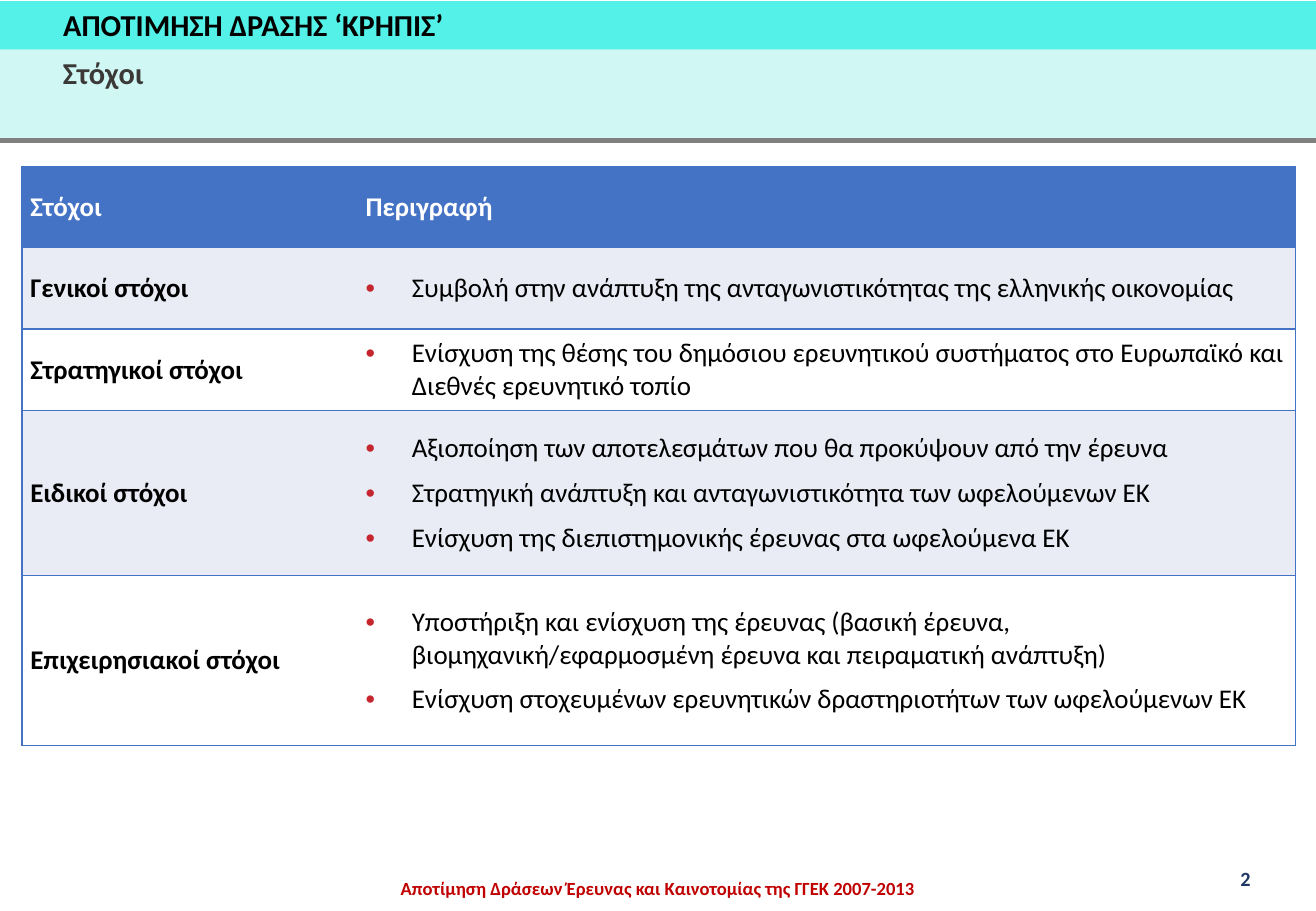
from lxml import etree
from pptx import Presentation
from pptx import util as u
from pptx.dml.color import RGBColor
from pptx.enum import shapes, text
from pptx.oxml import ns

BLACK = RGBColor(0x00, 0x00, 0x00)
WHITE = RGBColor(0xFF, 0xFF, 0xFF)
TURQUOISE = RGBColor(0x53, 0xF1, 0xE8)
PALE_TURQUOISE = RGBColor(0xD0, 0xF7, 0xF3)
GRAY = RGBColor(0x80, 0x80, 0x80)
DARK_GRAY = RGBColor(0x3B, 0x38, 0x38)
NAVY = RGBColor(0x20, 0x38, 0x64)
RED = RGBColor(0xC0, 0x00, 0x00)
BULLET_RED = RGBColor(0xC5, 0x25, 0x2D)
BLUE = RGBColor(0x44, 0x72, 0xC4)
PALE_BLUE = RGBColor(0xE9, 0xEB, 0xF5)

SLIDE_WIDTH, SLIDE_HEIGHT = 10.83, 7.5
PLAIN_TABLE_STYLE = "{2D5ABB26-0587-4C30-8999-92F81FD0307C}"

HEADINGS = ("Στόχοι", "Περιγραφή")
GOALS = [
    ("Γενικοί στόχοι", 0.67, [
        "Συμβολή στην ανάπτυξη της ανταγωνιστικότητας της ελληνικής οικονομίας"]),
    ("Στρατηγικοί στόχοι", 0.67, [
        "Ενίσχυση της θέσης του δημόσιου ερευνητικού συστήματος στο Ευρωπαϊκό "
        "και Διεθνές ερευνητικό τοπίο"]),
    ("Ειδικοί στόχοι", 1.36, [
        "Αξιοποίηση των αποτελεσμάτων που θα προκύψουν από την έρευνα",
        "Στρατηγική ανάπτυξη και ανταγωνιστικότητα των ωφελούμενων ΕΚ",
        "Ενίσχυση της διεπιστημονικής έρευνας στα ωφελούμενα ΕΚ"]),
    ("Επιχειρησιακοί στόχοι", 1.4, [
        "Υποστήριξη και ενίσχυση της έρευνας (βασική έρευνα, "
        "βιομηχανική/εφαρμοσμένη έρευνα και πειραματική ανάπτυξη)",
        "Ενίσχυση στοχευμένων ερευνητικών δραστηριοτήτων των ωφελούμενων ΕΚ"]),
]


def set_attributes(target, values):
    for name, value in values.items():
        setattr(target, name, value)


def format_font(paragraph, size, color, bold=True):
    set_attributes(paragraph.font, {"name": "Calibri", "size": u.Pt(size), "bold": bold})
    paragraph.font.color.rgb = color


def write_line(shape, wording, size, color, wrap=True):
    """Put one bold line at the top of a shape and return its paragraph."""
    set_attributes(shape.text_frame, {
        "text": wording, "word_wrap": wrap, "vertical_anchor": text.MSO_ANCHOR.TOP,
        "auto_size": text.MSO_AUTO_SIZE.NONE,
        "margin_left": u.Inches(0.1), "margin_right": u.Inches(0.1),
        "margin_top": u.Inches(0.05), "margin_bottom": u.Inches(0.05)})
    paragraph = shape.text_frame.paragraphs[0]
    paragraph.alignment = text.PP_ALIGN.LEFT
    format_font(paragraph, size, color)
    return paragraph


def add_text(slide, box, wording, size, color, wrap=True):
    shape = slide.shapes.add_textbox(*map(u.Inches, box))
    return shape, write_line(shape, wording, size, color, wrap)


def add_header(slide, left, top, width, height):
    title_height = 0.4
    # Two colour bands
    bands = [(top, title_height, TURQUOISE),
             (top + title_height, height - title_height, PALE_TURQUOISE)]
    for band_top, band_height, color in bands:
        band = slide.shapes.add_shape(
            shapes.MSO_SHAPE.RECTANGLE,
            *map(u.Inches, (left, band_top, width, band_height)))
        band.shadow.inherit = False
        band.fill.solid()
        band.fill.fore_color.rgb = color
        band.line.fill.background()

    # Rule under the bands
    bottom = top + height
    rule = slide.shapes.add_connector(
        shapes.MSO_CONNECTOR.STRAIGHT,
        *map(u.Inches, (left, bottom, left + width, bottom)))
    rule.line.color.rgb = GRAY
    rule.line.width = u.Pt(3)
    etree.SubElement(rule._element.spPr, ns.qn("a:effectLst"))

    # Title in front of the bands, subtitle below it
    title = slide.shapes.title
    slide.shapes._spTree.append(title._element)
    set_attributes(title, {
        "left": u.Inches(left + 0.42), "top": u.Inches(top - 0.01),
        "width": u.Inches(6), "height": u.Inches(title_height)})
    write_line(title, "ΑΠΟΤΙΜΗΣΗ ΔΡΑΣΗΣ ‘ΚΡΗΠΙΣ’", 18, BLACK)
    add_text(slide, (left + 0.42, top + title_height - 0.01, 0.93, 0.4),
             "Στόχοι", 18, DARK_GRAY, wrap=False)


def add_bullet(paragraph):
    properties = paragraph._p.get_or_add_pPr()
    set_attributes_xml = {"marL": u.Inches(0.38), "indent": u.Inches(-0.38)}
    for name, value in set_attributes_xml.items():
        properties.set(name, str(int(value)))
    color = etree.SubElement(properties, ns.qn("a:buClr"))
    etree.SubElement(color, ns.qn("a:srgbClr"), val=str(BULLET_RED))
    etree.SubElement(properties, ns.qn("a:buFont"), typeface="Arial")
    etree.SubElement(properties, ns.qn("a:buChar"), char="•")


def add_borders(cell, sides):
    properties = cell._tc.get_or_add_tcPr()
    for position, side in enumerate(sides):
        border = etree.Element(ns.qn(f"a:ln{side}"), w=str(int(u.Pt(1))))
        fill = etree.SubElement(border, ns.qn("a:solidFill"))
        etree.SubElement(fill, ns.qn("a:srgbClr"), val=str(BLUE))
        properties.insert(position, border)


def fill_cell(cell, lines, fill, color, bold, bulleted, sides):
    set_attributes(cell, {
        "vertical_anchor": text.MSO_ANCHOR.MIDDLE,
        "margin_left": u.Inches(0.07), "margin_right": u.Inches(0.07),
        "margin_top": u.Inches(0.04), "margin_bottom": u.Inches(0.04)})
    cell.fill.solid()
    cell.fill.fore_color.rgb = fill
    add_borders(cell, sides)
    cell.text_frame.text = "\n".join(lines)
    for index, paragraph in enumerate(cell.text_frame.paragraphs):
        if bulleted:
            add_bullet(paragraph)
        set_attributes(paragraph, {
            "space_before": u.Pt(3 if index else 0),
            "space_after": u.Pt(4 if bulleted else 2)})
        format_font(paragraph, 16, color, bold)


def add_goals_table(slide, left, top, width, height):
    frame = slide.shapes.add_table(
        len(GOALS) + 1, 2, *map(u.Inches, (left, top, width, height)))
    table = frame.table
    set_attributes(table, {"first_row": False, "horz_banding": False})
    table._tbl.tblPr.find(ns.qn("a:tableStyleId")).text = PLAIN_TABLE_STYLE
    label_width = 2.76
    table.columns[0].width = u.Inches(label_width)
    table.columns[1].width = u.Inches(width - label_width)

    rows = [(HEADINGS[0], 0.67, [HEADINGS[1]]), *GOALS]
    for index, (label, row_height, lines) in enumerate(rows):
        table.rows[index].height = u.Inches(row_height)
        heading = index == 0
        fill = BLUE if heading else (PALE_BLUE if index % 2 else WHITE)
        color = WHITE if heading else BLACK
        fill_cell(table.cell(index, 0), [label], fill, color, True, False, "LTB")
        fill_cell(table.cell(index, 1), lines, fill, color, heading, not heading, "RTB")


def add_footer(slide, left, top, width, height):
    # Centred project name
    name_width = 5.19
    name, paragraph = add_text(
        slide, (left + (width - name_width) / 2, top, name_width, height),
        "Aποτίμηση Δράσεων Έρευνας και Καινοτομίας της ΓΓΕΚ 2007-2013", 11, RED)
    margins = ("margin_left", "margin_top", "margin_right", "margin_bottom")
    set_attributes(name.text_frame, dict.fromkeys(margins, 0))
    set_attributes(paragraph, {
        "alignment": text.PP_ALIGN.CENTER, "line_spacing": u.Pt(25.3)})

    # Page number
    add_text(slide, (left + width - 0.72, top + 0.03, 0.52, 0.3), "2", 12, NAVY)


def main():
    presentation = Presentation()
    set_attributes(presentation, {
        "slide_width": u.Inches(SLIDE_WIDTH), "slide_height": u.Inches(SLIDE_HEIGHT)})
    slide = presentation.slides.add_slide(presentation.slide_layouts[5])
    add_header(slide, 0, 0.01, SLIDE_WIDTH, 1.15)
    add_goals_table(slide, 0.18, 1.37, 10.48, 4.77)
    add_footer(slide, 0, 7.05, SLIDE_WIDTH, 0.38)
    presentation.save("out.pptx")


if __name__ == "__main__":
    main()
